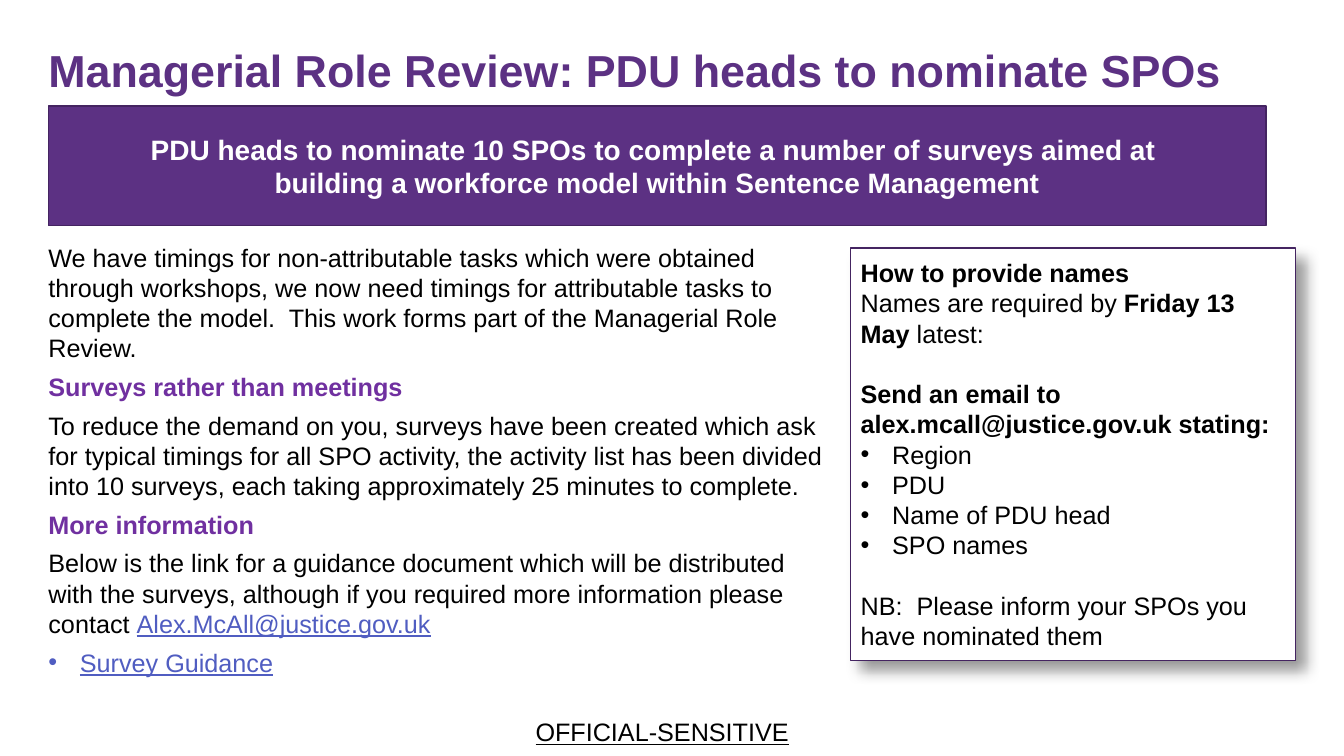
from dataclasses import dataclass

from lxml import etree
from pptx import Presentation
from pptx.dml.color import RGBColor
from pptx.enum.shapes import MSO_SHAPE
from pptx.enum.text import MSO_ANCHOR, PP_ALIGN
from pptx.oxml.ns import qn
from pptx.util import Pt

RECT = MSO_SHAPE.RECTANGLE
MIDDLE = MSO_ANCHOR.MIDDLE
LEFT, CENTER = PP_ALIGN.LEFT, PP_ALIGN.CENTER


@dataclass
class Theme:
    face: str = "Arial"
    brand: str = "5C3183"
    edge: str = "442461"
    head: str = "7030A0"
    link: str = "505DC1"
    ink: str = "000000"
    paper: str = "FFFFFF"
    title: int = 32
    lead: int = 20
    body: int = 18


theme = Theme()


def panel(slide, box, fill):
    shape = slide.shapes.add_shape(RECT, *map(Pt, box))
    shape.shadow.inherit = False
    shape.fill.solid()
    shape.fill.fore_color.rgb = RGBColor.from_string(fill)
    shape.line.color.rgb = RGBColor.from_string(theme.edge)
    shape.line.width = Pt(1)
    shape.text_frame.word_wrap = True
    shape.text_frame.vertical_anchor = MIDDLE
    return shape


def write(frame, runs, color=theme.ink, size=theme.body, bold=False,
          align=LEFT, before=0, after=0, mark=False):
    para = frame.paragraphs[0]
    if para.runs:
        para = frame.add_paragraph()
    for text in runs:
        para.add_run().text = text
    para.alignment = align
    para.space_before, para.space_after = Pt(before), Pt(after)
    if mark:
        props = para._p.get_or_add_pPr()
        props.set("marL", str(Pt(22.5)))
        props.set("indent", str(-Pt(22.5)))
        tint = etree.SubElement(props, qn("a:buClr"))
        etree.SubElement(tint, qn("a:srgbClr"), val=color)
        etree.SubElement(props, qn("a:buFont"), typeface=theme.face)
        etree.SubElement(props, qn("a:buChar"), char="•")
    para.font.name = theme.face
    para.font.size = Pt(size)
    para.font.bold = bold
    para.font.color.rgb = RGBColor.from_string(color)
    return para


deck = Presentation()
deck.slide_width, deck.slide_height = Pt(960), Pt(540)
slide = deck.slides.add_slide(deck.slide_layouts[6])

footer = slide.shapes.add_textbox(Pt(374.4), Pt(508.3), Pt(197.3), Pt(28.8))
footer.text_frame.word_wrap = False
write(footer.text_frame, ["OFFICIAL-SENSITIVE"], align=CENTER).font.underline = True

frames = []
for box in ((34.6, 0, 890.6, 104.4), (34.6, 172.8, 556.6, 342.7)):
    frame = slide.shapes.add_textbox(*map(Pt, box)).text_frame
    frame.word_wrap = True
    frame.margin_left = frame.margin_right = 0
    frame.margin_top = frame.margin_bottom = 0
    frames.append(frame)
title, body = frames

title.vertical_anchor = MIDDLE
write(title, ["Managerial Role Review: PDU heads to nominate SPOs"],
      theme.brand, theme.title, True).line_spacing = 0.9

story = [
    ("We have timings for non-attributable tasks which were obtained through workshops, "
     "we now need timings for attributable tasks to complete the model.  "
     "This work forms part of the Managerial Role Review.", False),
    ("Surveys rather than meetings", True),
    ("To reduce the demand on you, surveys have been created which ask for typical "
     "timings for all SPO activity, the activity list has been divided into 10 surveys, "
     "each taking approximately 25 minutes to complete.", False),
    ("More information", True),
]
for text, head in story:
    write(body, [text], theme.head if head else theme.ink, bold=head, after=6)

contact = write(body, [
    "Below is the link for a guidance document which will be distributed with the "
    "surveys, although if you required more information please contact ",
    "Alex.McAll@justice.gov.uk"], after=6)
mail = contact.runs[1].font
mail.color.rgb = RGBColor.from_string(theme.link)
mail.underline = True
guide = write(body, ["Survey Guidance"], theme.link, after=6, mark=True)
guide.font.underline = True

banner = panel(slide, (34.6, 75.6, 869.8, 85.7), theme.brand)
for text in ("PDU heads to nominate 10 SPOs to complete a number of surveys aimed at ",
             "building a workforce model within Sentence Management"):
    write(banner.text_frame, [text], theme.paper, theme.lead, True, CENTER)

card = panel(slide, (607.7, 177.1, 317.5, 294.5), theme.paper)
glow = etree.SubElement(card._element.spPr.find(qn("a:effectLst")), qn("a:outerShdw"),
                        blurRad=str(Pt(10)), dist=str(Pt(10)), dir="2700000",
                        algn="tl", rotWithShape="0")
shade = etree.SubElement(glow, qn("a:srgbClr"), val=theme.ink)
etree.SubElement(shade, qn("a:alpha"), val="40000")

notes = card.text_frame
gap = 21.6
write(notes, ["How to provide names"], bold=True)
due = write(notes, ["Names are required by ", "Friday 13 May ", "latest:"])
due.runs[1].font.bold = True
write(notes, ["Send an email to alex.mcall@justice.gov.uk stating:"], bold=True, before=gap)
for item in ("Region", "PDU", "Name of PDU head", "SPO names"):
    write(notes, [item], mark=True)
write(notes, ["NB:  Please inform your SPOs you have nominated them"], before=gap)

deck.save("out.pptx")
